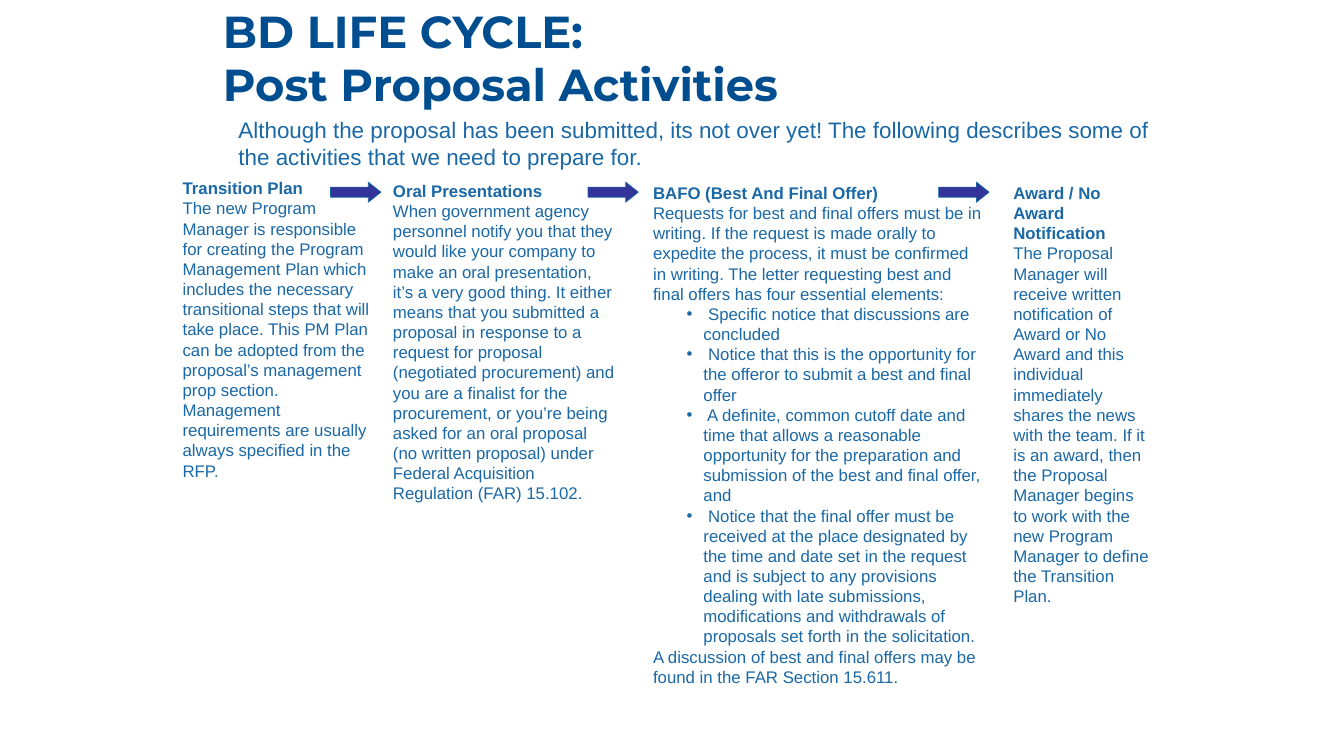
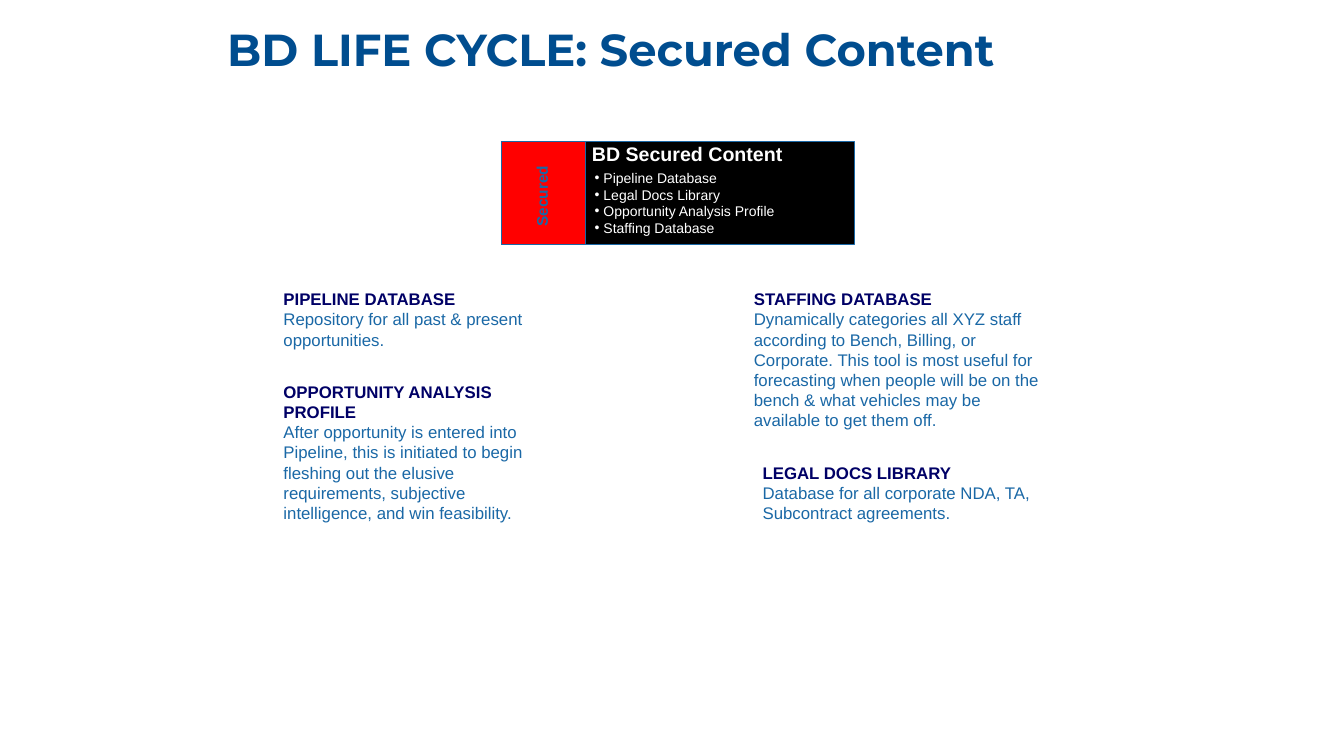
from lxml import etree
from pptx import Presentation
from pptx.dml.color import RGBColor
from pptx.enum.shapes import MSO_SHAPE
from pptx.enum.text import MSO_AUTO_SIZE
from pptx.oxml.ns import qn
from pptx.util import Pt

RECTANGLE = MSO_SHAPE.RECTANGLE
RIGHT_ARROW = MSO_SHAPE.RIGHT_ARROW
GROW = MSO_AUTO_SIZE.SHAPE_TO_FIT_TEXT

BLUE = "1A68A6"
TITLE_BLUE = "004D8F"
NAVY = "000066"
INDIGO = "333399"
RED = "FF0000"
BLACK = "000000"
WHITE = "FFFFFF"


def rgb(value):
    return RGBColor.from_string(value)


def add_box(page, left, top, width, height, wrap=True):
    box = page.shapes.add_textbox(Pt(left), Pt(top), Pt(width), Pt(height))
    box.text_frame.word_wrap = wrap
    box.text_frame.auto_size = GROW
    return box


def add_filled(page, preset, left, top, width, height, fill):
    shape = page.shapes.add_shape(preset, Pt(left), Pt(top), Pt(width), Pt(height))
    shape.shadow.inherit = False
    shape.fill.solid()
    shape.fill.fore_color.rgb = rgb(fill)
    shape.line.color.rgb = rgb(BLUE)
    shape.line.width = Pt(0.75)
    return shape


def write(box, text, size=18, color=BLUE, bold=False, font="Arial",
          bullet=False, margin=0, indent=0):
    """Add one paragraph to the box, filling its empty first one if there is one."""
    frame = box.text_frame
    para = frame.paragraphs[0]
    if para.runs:
        para = frame.add_paragraph()
    if bullet:
        properties = para._p.get_or_add_pPr()
        properties.set("marL", str(Pt(margin)))
        properties.set("indent", str(Pt(indent)))
        etree.SubElement(properties, qn("a:buFont")).set("typeface", "Arial")
        etree.SubElement(properties, qn("a:buChar")).set("char", "•")
    span = para.add_run()
    span.text = text
    span.font.size = Pt(size)
    span.font.name = font
    span.font.bold = bold
    span.font.color.rgb = rgb(color)


def add_title(page, left, top, height, *lines):
    box = add_box(page, left, top, 1006.6, height)
    for line in lines:
        write(box, line, size=48, color=TITLE_BLUE, bold=True, font="Montserrat")


def add_topic(page, place, heading, body, heading_color=BLUE):
    box = add_box(page, *place)
    write(box, heading, color=heading_color, bold=True)
    write(box, body)
    return box


def add_step_arrows(page, top, lefts):
    for left in lefts:
        arrow = add_filled(page, RIGHT_ARROW, left, top, 54, 21.6, INDIGO)
        arrow.adjustments[0] = 0.5
        arrow.adjustments[1] = 0.63


def add_secured_panel(page, left, top, width, height):
    """Black panel with a red tag on its left side."""
    tag_width = 90
    add_filled(page, RECTANGLE, left, top, width, height, BLACK)
    heading = add_box(page, left + tag_width, top - 3, 220.3, 32.4, wrap=False)
    write(heading, "BD Secured Content", size=21, color=WHITE, bold=True)
    contents = add_box(page, left + tag_width + 3, top + 26.6, width, 80)
    for item in ("Pipeline Database", "Legal Docs Library",
                 "Opportunity Analysis Profile", "Staffing Database"):
        write(contents, " " + item, size=15, color=WHITE, bullet=True)
    add_filled(page, RECTANGLE, left, top, tag_width, height, RED)
    tag = add_box(page, left - 17.3, top + 23.8, 121.7, 27.4)
    tag.rotation = 270
    write(tag, "Secured", size=16.5, bold=True)


def build_post_proposal(page):
    bafo = add_topic(
        page, (692.6, 192.2, 368.6, 552.2), "BAFO (Best And Final Offer)",
        "Requests for best and final offers must be in writing. If the request is made "
        "orally to expedite the process, it must be confirmed in writing. The letter "
        "requesting best and final offers has four essential elements:")
    elements = (
        "Specific notice that discussions are concluded",
        "Notice that this is the opportunity for the offeror to submit a best and final offer",
        "A definite, common cutoff date and time that allows a reasonable opportunity for "
        "the preparation and submission of the best and final offer, and",
        "Notice that the final offer must be received at the place designated by the time "
        "and date set in the request and is subject to any provisions dealing with late "
        "submissions, modifications and withdrawals of proposals set forth in the "
        "solicitation.",
    )
    for element in elements:
        write(bafo, " " + element, bullet=True, margin=54, indent=-18)
    write(bafo, "A discussion of best and final offers may be found in the FAR "
                "Section 15.611.")
    add_topic(
        page, (188.6, 187.2, 216, 334), "Transition Plan",
        "The new Program Manager is responsible for creating the Program Management Plan "
        "which includes the necessary transitional steps that will take place. This PM "
        "Plan can be adopted from the proposal’s management prop section. Management "
        "requirements are usually always specified in the RFP.")
    add_topic(
        page, (414, 190, 252, 356.4), "Oral Presentations",
        "When government agency personnel notify you that they would like your company to "
        "make an oral presentation, it’s a very good thing. It either means that you "
        "submitted a proposal in response to a request for proposal (negotiated "
        "procurement) and you are a finalist for the procurement, or you’re being asked "
        "for an oral proposal (no written proposal) under Federal Acquisition Regulation "
        "(FAR) 15.102.")
    add_topic(
        page, (1078.6, 192.2, 162, 465), "Award / No Award Notification",
        "The Proposal Manager will receive written notification of Award or No Award and "
        "this individual immediately shares the news with the team. If it is an award, "
        "then the Proposal Manager begins to work with the new Program Manager to define "
        "the Transition Plan.")
    intro = add_box(page, 248.4, 121, 992.2, 65.5)
    write(intro, "Although the proposal has been submitted, its not over yet! The following "
                 "describes some of the activities that we need to prepare for.", size=24)
    add_step_arrows(page, 195.1, (354.2, 630, 1005.8))
    add_title(page, 231.8, 0, 123.8, "BD LIFE CYCLE:", "Post Proposal Activities")


def build_secured_content(page):
    topics = (
        ((800.6, 306, 332.6, 160), "STAFFING DATABASE",
         "Dynamically categories all XYZ staff according to Bench, Billing, or Corporate. "
         "This tool is most useful for forecasting when people will be on the bench & what "
         "vehicles may be available to get them off."),
        ((810, 491.8, 324, 72.7), "LEGAL DOCS LIBRARY",
         "Database for all corporate NDA, TA, Subcontract agreements."),
        ((296.6, 306, 279.4, 72.7), "PIPELINE DATABASE",
         "Repository for all past & present opportunities."),
        ((296.6, 405.4, 296.6, 160), "OPPORTUNITY ANALYSIS PROFILE",
         "After opportunity is entered into Pipeline, this is initiated to begin fleshing "
         "out the elusive requirements, subjective intelligence, and win feasibility."),
    )
    for place, heading, body in topics:
        add_topic(page, place, heading, body, heading_color=NAVY)
    add_secured_panel(page, 537.1, 151.2, 378, 110.2)
    add_title(page, 236.2, 19.4, 65.5, "BD LIFE CYCLE: Secured Content")


def main():
    deck = Presentation()
    deck.slide_width = Pt(1440)
    deck.slide_height = Pt(810)
    for build in (build_post_proposal, build_secured_content):
        build(deck.slides.add_slide(deck.slide_layouts[6]))
    deck.save("out.pptx")


if __name__ == "__main__":
    main()
